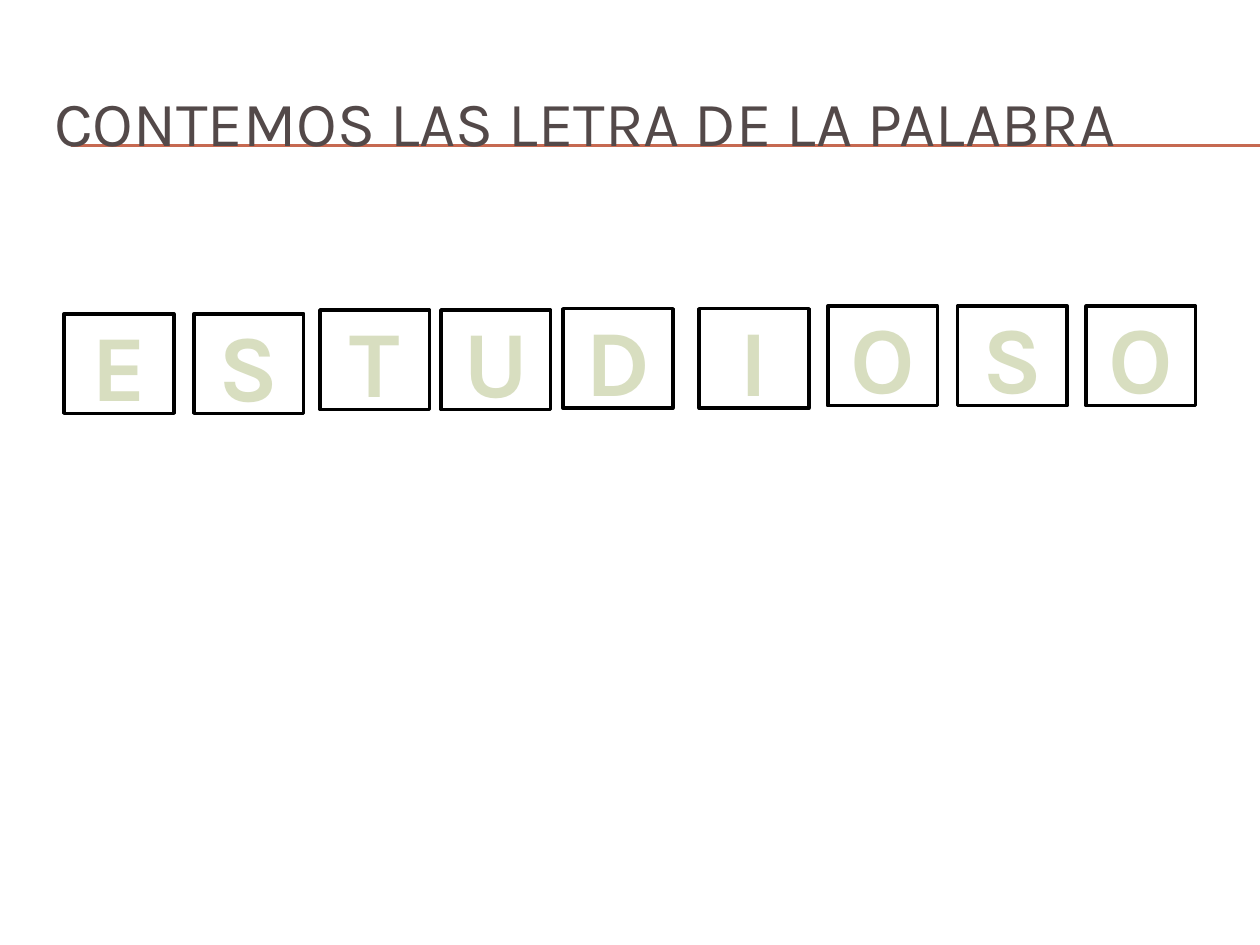
from lxml.etree import SubElement
from pptx import Presentation
from pptx.dml.color import RGBColor
from pptx.enum.shapes import MSO_CONNECTOR, MSO_SHAPE
from pptx.enum.text import MSO_ANCHOR, MSO_AUTO_SIZE, PP_ALIGN
from pptx.oxml.ns import qn
from pptx.util import Inches, Pt

FONT = "Karla"
WHITE = RGBColor(0xFF, 0xFF, 0xFF)
BLACK = RGBColor(0, 0, 0)
GREY = RGBColor(0x53, 0x49, 0x49)
RUST = RGBColor(0xC6, 0x69, 0x51)
SAGE = RGBColor(0xD8, 0xDE, 0xC0)

WORD = "ESTUDIOSO"
LEFTS = (0.51, 1.54, 2.54, 3.5, 4.47, 5.55, 6.57, 7.6, 8.62)
TOPS = (2.49, 2.49, 2.46, 2.46, 2.45, 2.45, 2.43, 2.43, 2.43)


def write(shape, text, size, color, bold=False, align=PP_ALIGN.LEFT):
    """Put formatted, vertically centred text in a shape."""
    frame = shape.text_frame
    frame.word_wrap = True
    frame.auto_size = MSO_AUTO_SIZE.NONE
    frame.vertical_anchor = MSO_ANCHOR.MIDDLE
    para = frame.paragraphs[0]
    para.alignment = align
    run = para.add_run()
    run.text = text
    run.font.name = FONT
    run.font.size = Pt(size)
    run.font.bold = bold
    run.font.color.rgb = color


def add_rule(slide, left, top, right):
    """Draw a thin horizontal rule."""
    rule = slide.shapes.add_connector(
        MSO_CONNECTOR.STRAIGHT, Inches(left), Inches(top), Inches(right), Inches(top))
    rule.line.color.rgb = RUST
    rule.line.width = Pt(0.75)
    SubElement(rule._element.spPr, qn("a:effectLst"))


def add_title(slide, left, top, width, height):
    """Place the title in front of its double rule."""
    for drop in (0.65, 0.66):
        add_rule(slide, left + 0.23, top + drop, 10)
    title = slide.shapes.title
    title.left, title.top = Inches(left), Inches(top)
    title.width, title.height = Inches(width), Inches(height)
    write(title, "CONTEMOS LAS LETRA DE LA PALABRA", 36, GREY)
    slide.shapes._spTree.append(title._element)


def add_tile(slide, letter, left, top, width, height):
    """Draw one framed letter."""
    tile = slide.shapes.add_shape(
        MSO_SHAPE.RECTANGLE, Inches(left), Inches(top), Inches(width), Inches(height))
    tile.shadow.inherit = False
    tile.fill.solid()
    tile.fill.fore_color.rgb = WHITE
    tile.line.color.rgb = BLACK
    tile.line.width = Pt(2)
    write(tile, letter, 54, SAGE, bold=True, align=PP_ALIGN.CENTER)


def main():
    """Build and save the slide."""
    deck = Presentation()
    deck.slide_width, deck.slide_height = Inches(10), Inches(7.5)
    slide = deck.slides.add_slide(deck.slide_layouts[5])
    add_title(slide, 0.33, 0.5, 9.5, 0.92)
    for letter, left, top in zip(WORD, LEFTS, TOPS):
        add_tile(slide, letter, left, top, 0.87, 0.79)
    deck.save("out.pptx")


if __name__ == "__main__":
    main()
